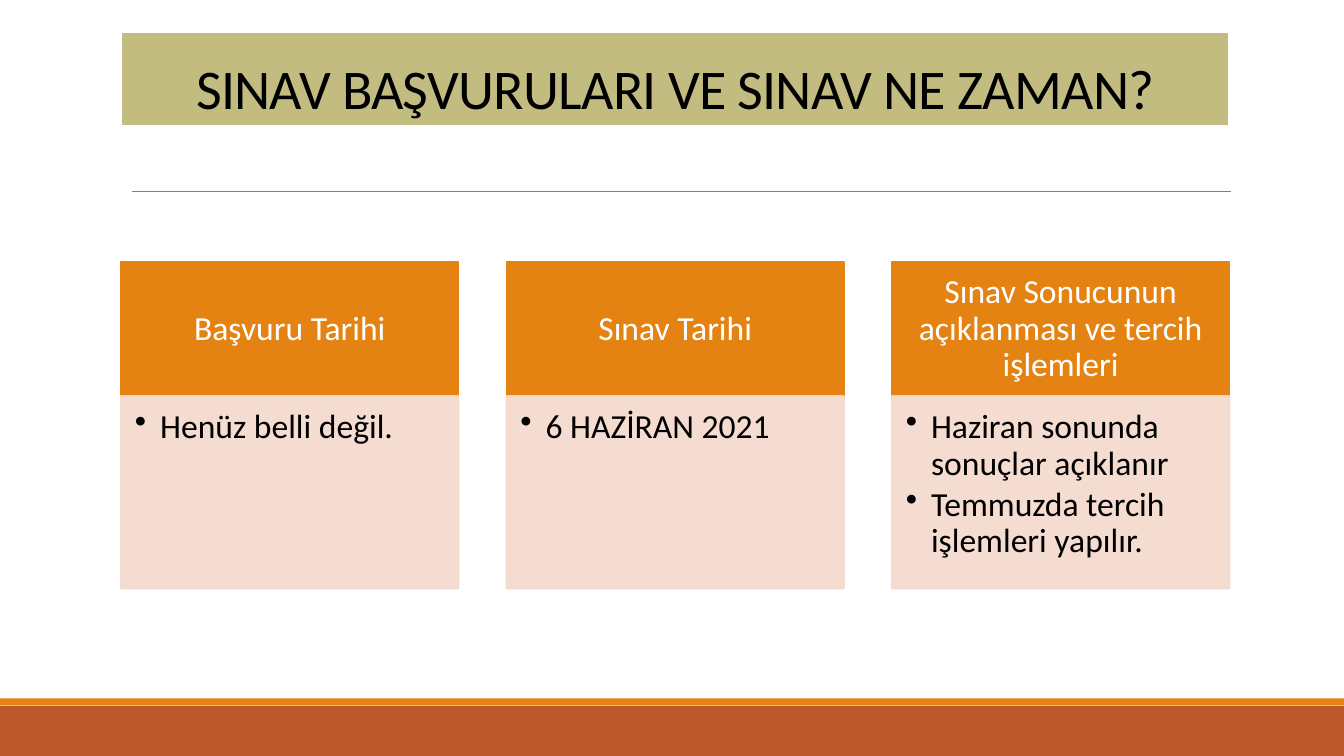
"""Build the slide on exam applications and exam dates."""
from lxml.etree import SubElement
from pptx import Presentation
from pptx.dml.color import RGBColor
from pptx.enum.shapes import MSO_CONNECTOR, MSO_SHAPE
from pptx.enum.text import MSO_ANCHOR, PP_ALIGN
from pptx.oxml.ns import qn
from pptx.util import Pt

TITLE = "SINAV BAŞVURULARI VE SINAV NE ZAMAN?"
CARDS = [
    ("Başvuru Tarihi", ["Henüz belli değil."]),
    ("Sınav Tarihi", ["6 HAZİRAN 2021"]),
    ("Sınav Sonucunun açıklanması ve tercih işlemleri",
     ["Haziran sonunda sonuçlar açıklanır", "Temmuzda tercih işlemleri yapılır."]),
]

FONT = "Calibri"
BLACK = RGBColor(0x00, 0x00, 0x00)
WHITE = RGBColor(0xFF, 0xFF, 0xFF)
GRAY = RGBColor(0x80, 0x80, 0x80)
KHAKI = RGBColor(0xC2, 0xBC, 0x80)
ORANGE = RGBColor(0xE4, 0x83, 0x12)
RUST = RGBColor(0xBD, 0x58, 0x2C)
PINK = RGBColor(0xF5, 0xD9, 0xCC)

SLIDE_WIDTH, SLIDE_HEIGHT = 960, 540
CARD_LEFT, CARD_TOP, CARD_WIDTH, CARD_STEP = 86.4, 187.4, 241.2, 275.3
HEADER_HEIGHT, BODY_HEIGHT = 95.4, 137.6


def add_box(slide, left, top, width, height, fill, line=None, line_width=1.25):
    shape = slide.shapes.add_shape(
        MSO_SHAPE.RECTANGLE, Pt(left), Pt(top), Pt(width), Pt(height))
    shape.shadow.inherit = False
    shape.fill.solid()
    shape.fill.fore_color.rgb = fill
    if line is None:
        shape.line.fill.background()
    else:
        shape.line.color.rgb = line
        shape.line.width = Pt(line_width)
    return shape


def write(shape, lines, size, color, align, anchor, margins, spacing, after=0):
    frame = shape.text_frame
    frame.word_wrap = True
    frame.vertical_anchor = anchor
    (frame.margin_left, frame.margin_top,
     frame.margin_right, frame.margin_bottom) = map(Pt, margins)
    frame.text = "\n".join(lines)
    for paragraph in frame.paragraphs:
        paragraph.alignment = align
        paragraph.line_spacing = spacing
        paragraph.space_after = Pt(after)
        paragraph.font.name = FONT
        paragraph.font.size = Pt(size)
        paragraph.font.color.rgb = color
    return frame.paragraphs


def add_bullet(paragraph):
    properties = paragraph._p.get_or_add_pPr()
    properties.set("marL", str(Pt(18)))
    properties.set("indent", str(-Pt(18)))
    bullet = SubElement(properties, qn("a:buChar"), char="•")
    properties.remove(bullet)
    properties.find(qn("a:defRPr")).addprevious(bullet)


def add_card(slide, left, header_text, items):
    header = add_box(slide, left, CARD_TOP, CARD_WIDTH, HEADER_HEIGHT, ORANGE, ORANGE)
    write(header, [header_text], 24, WHITE, PP_ALIGN.CENTER, MSO_ANCHOR.MIDDLE,
          (13.5, 8, 13.5, 8), 0.9)
    body = add_box(slide, left, CARD_TOP + HEADER_HEIGHT, CARD_WIDTH, BODY_HEIGHT,
                   PINK, PINK)
    for color in body._element.spPr.iter(qn("a:srgbClr")):
        SubElement(color, qn("a:alpha"), val="90000")
    for paragraph in write(body, items, 24, BLACK, PP_ALIGN.LEFT, MSO_ANCHOR.TOP,
                           (10, 10, 13.5, 15), 0.9, 3.6):
        add_bullet(paragraph)


def main():
    presentation = Presentation()
    presentation.slide_width = Pt(SLIDE_WIDTH)
    presentation.slide_height = Pt(SLIDE_HEIGHT)
    slide = presentation.slides.add_slide(presentation.slide_layouts[6])

    add_box(slide, 0, 504, SLIDE_WIDTH, 36, RUST)
    add_box(slide, 0, 498.8, SLIDE_WIDTH, 5, ORANGE)
    rule = slide.shapes.add_connector(
        MSO_CONNECTOR.STRAIGHT, Pt(94.4), Pt(136.8), Pt(879), Pt(136.8))
    rule.line.color.rgb = GRAY
    rule.line.width = Pt(0.5)
    SubElement(rule._element.spPr, qn("a:effectLst"))

    title = add_box(slide, 86.4, 22.5, 792, 67.5, KHAKI, WHITE, 2)
    heading = write(title, [TITLE], 40, BLACK, PP_ALIGN.CENTER, MSO_ANCHOR.BOTTOM,
                    (7.2, 3.6, 7.2, 3.6), 0.85)[0]
    heading.runs[0].font._element.set("spc", "-50")

    for index, (header_text, items) in enumerate(CARDS):
        add_card(slide, CARD_LEFT + index * CARD_STEP, header_text, items)

    presentation.save("out.pptx")


if __name__ == "__main__":
    main()
